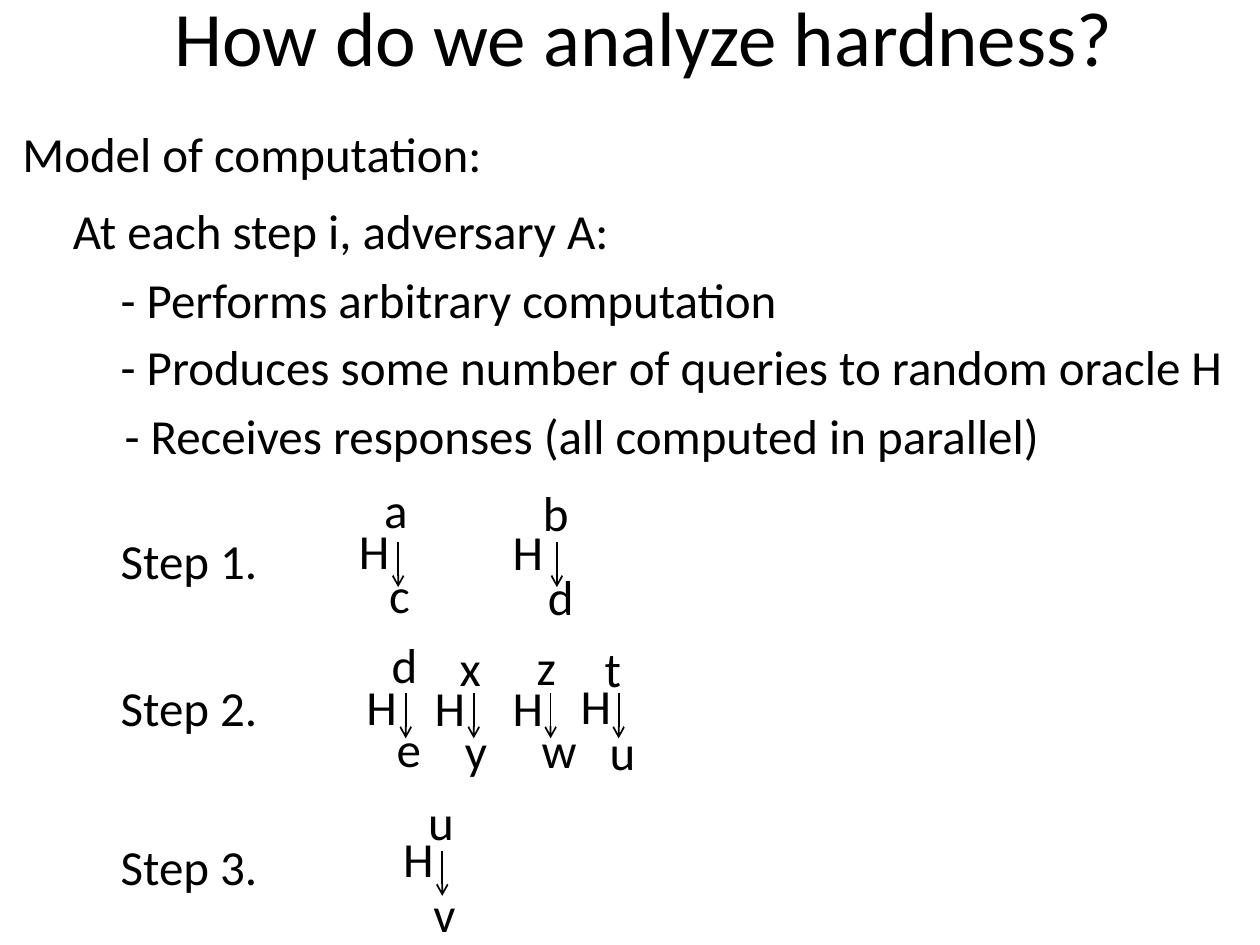
"""Build the slide on analyzing hardness with parallel oracle queries."""
from lxml.etree import SubElement
from pptx import Presentation
from pptx.dml.color import RGBColor
from pptx.enum.shapes import MSO_CONNECTOR
from pptx.enum.text import MSO_ANCHOR, PP_ALIGN
from pptx.oxml.ns import qn
from pptx.util import Pt

PX = 9144
BLACK = RGBColor(0, 0, 0)
FONT = "Calibri"
HIGH = 72

deck = Presentation()
deck.slide_width, deck.slide_height = 1000 * PX, 750 * PX
slide = deck.slides.add_slide(deck.slide_layouts[5])


def write(frame, text, size):
    frame.word_wrap = True
    frame.text = text
    font = frame.paragraphs[0].font
    font.name, font.size = FONT, Pt(size)
    font.color.rgb = BLACK


def label(text, left, top, width):
    box = slide.shapes.add_textbox(left * PX, top * PX, width * PX, HIGH * PX)
    write(box.text_frame, text, 28)


title = slide.shapes.title
title.left, title.top = 36 * PX, -34 * PX
title.width, title.height = 950 * PX, 125 * PX
write(title.text_frame, "How do we analyze hardness?", 44)
title.text_frame.vertical_anchor = MSO_ANCHOR.MIDDLE
title.text_frame.paragraphs[0].alignment = PP_ALIGN.CENTER

lines = [
    ("Model of computation:", 8, 93, 419),
    ("At each step i, adversary A:", 48, 154, 697),
    ("- Performs arbitrary computation", 86, 209, 710),
    ("- Produces some number of queries to random oracle H", 86, 262, 947),
    ("- Receives responses (all computed in parallel)", 89, 317, 879),
]
for line in lines:
    label(*line)

steps = [
    ("Step 1.", 416, 430, 67, [
        ("a", "c", 295, 376, 275, 408),
        ("b", "d", 421, 378, 397, 409),
    ]),
    ("Step 2.", 533, 550, 66, [
        ("d", "e", 301, 499, 281, 532),
        ("x", "y", 355, 501, 335, 533),
        ("z", "w", 416, 500, 397, 533),
        ("t", "u", 470, 502, 451, 531),
    ]),
    ("Step 3.", 659, 675, 73, [
        ("u", "v", 330, 623, 310, 653),
    ]),
]
for name, top, start, drop, queries in steps:
    label(name, 86, top, 162)
    for query, reply, left, high, side, mid in queries:
        label(query, left, high, 75)
        label(reply, left + 4, high + drop, 75)
        label("H", side, mid, 45)
        x = (left + 21) * PX
        arrow = slide.shapes.add_connector(
            MSO_CONNECTOR.STRAIGHT, x, start * PX, x, (start + 36) * PX)
        arrow.line.color.rgb = BLACK
        arrow.line.width = Pt(1)
        SubElement(arrow.line._get_or_add_ln(), qn("a:tailEnd"), type="arrow")
        SubElement(arrow._element.spPr, qn("a:effectLst"))

deck.save("out.pptx")
